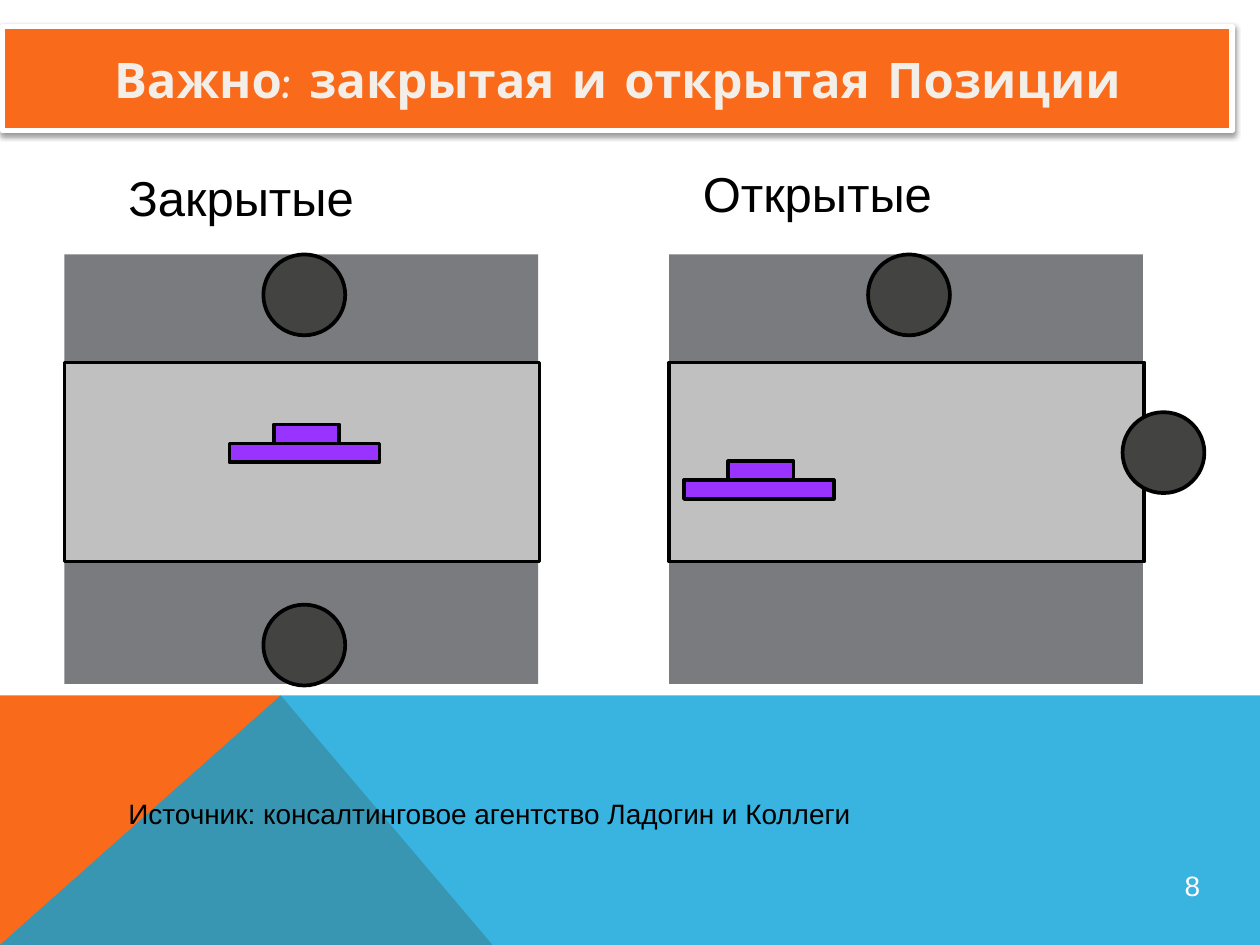
from lxml import etree
from pptx import Presentation
from pptx.dml.color import RGBColor
from pptx.enum.shapes import MSO_SHAPE
from pptx.enum.text import MSO_ANCHOR, PP_ALIGN
from pptx.oxml.ns import qn
from pptx.util import Cm, Pt

COLORS = {
    "orange": "F96A1B", "blue": "08A1D9", "cream": "F3EFE8",
    "floor": "797B7E", "table": "C0C0C0", "chair": "434342",
    "laptop": "9933FF", "black": "000000", "white": "FFFFFF",
}
SLIDE_W, SLIDE_H = 25.4, 19.05


def rgb(name):
    return RGBColor.from_string(COLORS[name])


def paint(sp, fill, line=None, width=2.13):
    sp.shadow.inherit = False
    sp.fill.solid()
    sp.fill.fore_color.rgb = rgb(fill)
    if line:
        sp.line.color.rgb = rgb(line)
        sp.line.width = Pt(width)
    else:
        sp.line.fill.background()


def add_part(shapes, kind, x, y, w, h, fill, line="black"):
    sp = shapes.add_shape(kind, Cm(x), Cm(y), Cm(w), Cm(h))
    paint(sp, fill, line)
    return sp


def write(sp, text, size, color, font="Arial", bold=False, align=PP_ALIGN.LEFT):
    tf = sp.text_frame
    tf.word_wrap = True
    tf.vertical_anchor = MSO_ANCHOR.MIDDLE
    tf.text = text
    p = tf.paragraphs[0]
    p.alignment = align
    r = p.runs[0]
    r.font.size, r.font.bold, r.font.name = Pt(size), bold, font
    r.font.color.rgb = rgb(color)


def add_label(s, x, y, w, h, text, size, color="black", align=PP_ALIGN.LEFT):
    sp = s.shapes.add_textbox(Cm(x), Cm(y), Cm(w), Cm(h))
    write(sp, text, size, color, align=align)
    return sp


def add_polygon(s, points, fill):
    start, *rest = [(Cm(x), Cm(y)) for x, y in points]
    builder = s.shapes.build_freeform(*start, scale=1.0)
    builder.add_line_segments(rest, close=True)
    sp = builder.convert_to_shape()
    paint(sp, fill)
    return sp


def add_footer_band(s, x, y, w, h):
    peak, foot, bottom = (x + 5.66, y), x + 9.93, y + h
    add_polygon(s, [(x, bottom), (x, y), peak, (foot, bottom)], "orange")
    band = add_polygon(
        s, [(x, bottom), peak, (x + w, y), (x + w, bottom)], "blue")
    # Translucent blue lets the orange show through
    color = band.fill._xPr.find(qn("a:solidFill"))[0]
    etree.SubElement(color, qn("a:alpha"), val="80000")

    # Source line and page number
    add_label(s, x + 2.34, y + 1.9, 15.75, 0.94,
              "Источник: консалтинговое агентство Ладогин и Коллеги", 16)
    number = add_label(s, x + 23.34, y + 3.13, 1.4, 1.4, "8", 16, "white",
                       PP_ALIGN.CENTER)
    tf = number.text_frame
    tf.margin_left = tf.margin_right = tf.margin_top = tf.margin_bottom = 0


def add_title(s, x, y, w, h):
    sp = add_part(s.shapes, MSO_SHAPE.RECTANGLE, x, y, w, h, "orange", "white")
    sp.line.width = Pt(3)
    write(sp, "Важно: закрытая и открытая Позиции", 28, "cream",
          "Comic Neue", True, PP_ALIGN.CENTER)
    # Soft shadow straight below the banner
    effects = sp._element.spPr.find(qn("a:effectLst"))
    shadow = etree.SubElement(
        effects, qn("a:outerShdw"), blurRad=str(Pt(3.1)), dist=str(Pt(1.6)),
        dir="5400000", rotWithShape="0")
    color = etree.SubElement(shadow, qn("a:srgbClr"), val=COLORS["black"])
    etree.SubElement(color, qn("a:alpha"), val="38000")


def add_seating(s, x, y, w, h, chairs, laptop):
    """Room seen from above; chairs and laptop are offsets in the room."""
    shapes = s.shapes.add_group_shape().shapes
    rect, oval = MSO_SHAPE.RECTANGLE, MSO_SHAPE.OVAL
    add_part(shapes, rect, x, y, w, h, "floor", None)
    add_part(shapes, rect, x, y + 2.18, w + 0.03, 4.01, "table")
    for dx, dy in chairs:
        add_part(shapes, oval, x + dx, y + dy, 1.65, 1.63, "chair")
    # Laptop: lid behind, base in front
    lx, ly = x + laptop[0], y + laptop[1]
    add_part(shapes, rect, lx + 0.89, ly - 0.38, 1.32, 0.53, "laptop")
    add_part(shapes, rect, lx, ly, 3.02, 0.38, "laptop")


def main():
    prs = Presentation()
    prs.slide_width, prs.slide_height = Cm(SLIDE_W), Cm(SLIDE_H)
    s = prs.slides.add_slide(prs.slide_layouts[6])

    add_footer_band(s, 0, 14.02, SLIDE_W, SLIDE_H - 14.02)
    add_title(s, 0.05, 0.53, 24.79, 2.11)

    # Closed and open positions side by side
    top_chair, bottom_chair, side_chair = (4.01, 0), (4.01, 7.06), (9.14, 3.18)
    add_seating(s, 1.3, 5.13, 9.55, 8.66, [top_chair, bottom_chair], (3.33, 3.81))
    add_seating(s, 13.49, 5.13, 9.55, 8.66, [top_chair, side_chair], (0.3, 4.55))
    add_label(s, 2.34, 3.28, 8.79, 1.4, "Закрытые", 28)
    add_label(s, 13.92, 3.18, 9.3, 1.4, "Открытые", 28)

    prs.save("out.pptx")


if __name__ == "__main__":
    main()
